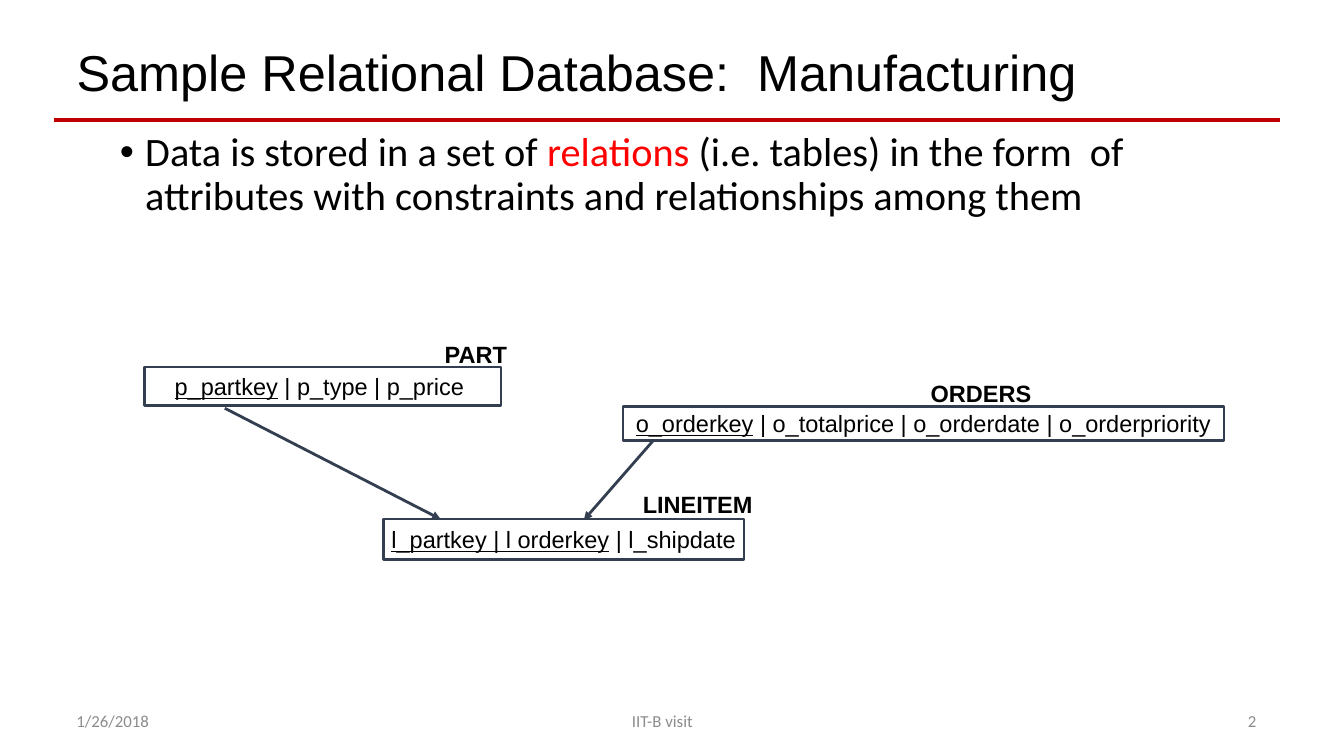
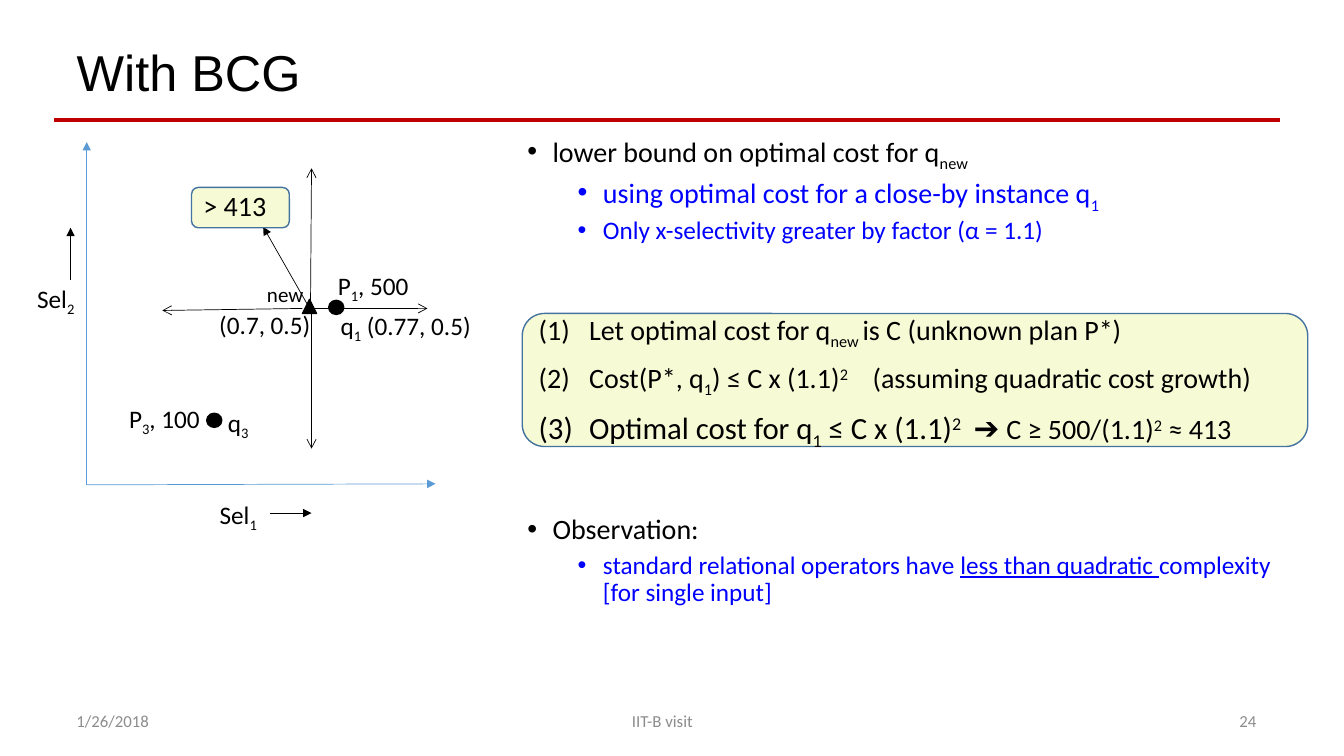
from dataclasses import dataclass

from lxml import etree
from pptx import Presentation
from pptx.dml.color import RGBColor
from pptx.enum.shapes import MSO_CONNECTOR, MSO_SHAPE
from pptx.enum.text import MSO_ANCHOR, MSO_AUTO_SIZE, PP_ALIGN
from pptx.oxml.ns import qn
from pptx.util import Inches, Pt

LEFT, CENTER, RIGHT = PP_ALIGN.LEFT, PP_ALIGN.CENTER, PP_ALIGN.RIGHT
TOP, MIDDLE = MSO_ANCHOR.TOP, MSO_ANCHOR.MIDDLE
FIXED, GROW = MSO_AUTO_SIZE.NONE, MSO_AUTO_SIZE.SHAPE_TO_FIT_TEXT
STRAIGHT = MSO_CONNECTOR.STRAIGHT
RECTANGLE, ROUNDED = MSO_SHAPE.RECTANGLE, MSO_SHAPE.ROUNDED_RECTANGLE
DOT, TRIANGLE = MSO_SHAPE.OVAL, MSO_SHAPE.ISOSCELES_TRIANGLE

# Run formats used inside a line of text
SUB, SUPER = {"baseline": -25}, {"baseline": 30}
UNDERLINE, PLAIN = {"underline": True}, {}


@dataclass(frozen=True)
class Theme:
    heading_font: str = "Arial"
    body_font: str = "Calibri"
    black: str = "000000"
    white: str = "FFFFFF"
    rule: str = "C00000"
    highlight: str = "FF0000"
    detail: str = "0000FF"
    footer: str = "8C8C8C"
    schema: str = "333F50"
    axis: str = "5B9BD5"
    callout_fill: str = "F7FBD5"
    callout_line: str = "43739E"
    title_size: float = 36
    lead_size: float = 28.8
    large_size: float = 22
    body_size: float = 20
    label_size: float = 18
    schema_size: float = 16.8
    small_size: float = 15
    footer_size: float = 12


THEME = Theme()


def add_text(paragraph, runs, *, size=THEME.label_size, font=THEME.body_font,
             color=THEME.black, bold=False, align=LEFT, line_spacing=None,
             space_before=0, indent=None, hanging=0.25, bullet=None, numbered=False):
    """Fill a paragraph from a string or a list of (text, run format) pairs."""
    paragraph.alignment = align
    paragraph.space_before = Pt(space_before)
    if line_spacing:
        paragraph.line_spacing = line_spacing
    properties = paragraph._p.get_or_add_pPr()
    if indent is not None:
        properties.set("marL", str(Inches(indent)))
        properties.set("indent", str(-Inches(hanging)))
    if bullet:
        etree.SubElement(properties, qn("a:buFont")).set("typeface", "Arial")
        etree.SubElement(properties, qn("a:buChar")).set("char", bullet)
    if numbered:
        etree.SubElement(properties, qn("a:buAutoNum")).set("type", "arabicParenBoth")
    for text, style in [(runs, PLAIN)] if isinstance(runs, str) else runs:
        if text == "\n":
            paragraph.add_line_break()
            continue
        run = paragraph.add_run()
        run.text = text
        run.font.name = font
        run.font.size = Pt(style.get("size", size))
        run.font.color.rgb = RGBColor.from_string(style.get("color", color))
        run.font.bold = bold
        run.font.underline = style.get("underline", False)
        run_properties = run._r.get_or_add_rPr()
        if "baseline" in style:
            run_properties.set("baseline", str(style["baseline"] * 1000))
        if "gap" in style:
            run_properties.set("spc", str(style["gap"] * 100))


def bullet_format(level=0, **changes):
    """Format of a list item at the given level."""
    base = {"bullet": "•", "line_spacing": 0.9}
    if level == 0:
        base.update(size=THEME.body_size, indent=0.25, space_before=10)
    else:
        base.update(size=THEME.label_size, indent=0.75, space_before=5, color=THEME.detail)
    return {**base, **changes}


class Deck:
    """Holds the theme, the presentation and the slide being built."""

    def __init__(self, theme):
        self.theme = theme
        self.presentation = Presentation()
        self.presentation.slide_width = Inches(13.33)
        self.presentation.slide_height = Inches(7.5)
        self.slide = None

    def add_slide(self, title, number):
        theme = self.theme
        layout = self.presentation.slide_layouts[1]
        self.slide = self.presentation.slides.add_slide(layout)
        frame = self.placeholder(self.slide.shapes.title, (0.66, 0.4, 11.87, 0.7), MIDDLE)
        add_text(frame.paragraphs[0], title, size=theme.title_size,
                 font=theme.heading_font, line_spacing=0.9)
        self.line((0.54, 1.19), (12.7, 1.19), color=theme.rule, width=3)
        for text, left, width, align in (("1/26/2018", 0.66, 3, LEFT),
                                         ("IIT-B visit", 4.32, 4.5, CENTER),
                                         (number, 9.56, 3, RIGHT)):
            self.label(text, (left, 6.95, width, 0.4), wrap=True, anchor=MIDDLE,
                       auto_size=FIXED, size=theme.footer_size,
                       color=theme.footer, align=align)

    def placeholder(self, shape, box, anchor):
        shape.left, shape.top, shape.width, shape.height = map(Inches, box)
        frame = shape.text_frame
        frame.word_wrap = True
        frame.auto_size = FIXED
        frame.vertical_anchor = anchor
        return frame

    def fill_frame(self, frame, items):
        for index, (runs, style) in enumerate(items):
            paragraph = frame.add_paragraph() if index else frame.paragraphs[0]
            add_text(paragraph, runs, **style)

    def body(self, box, items):
        frame = self.placeholder(self.slide.placeholders[1], box, TOP)
        self.fill_frame(frame, items)

    def label(self, runs, box, *, wrap=False, anchor=TOP, auto_size=GROW,
              inset=True, **style):
        frame = self.slide.shapes.add_textbox(*map(Inches, box)).text_frame
        frame.word_wrap = wrap
        frame.auto_size = auto_size
        frame.vertical_anchor = anchor
        if not inset:
            frame.margin_left = frame.margin_right = 0
            frame.margin_top = frame.margin_bottom = 0
        add_text(frame.paragraphs[0], runs, **style)

    def shape(self, kind, box, *, fill, line, width=1, items=(), wrap=True):
        shape = self.slide.shapes.add_shape(kind, *map(Inches, box))
        shape.shadow.inherit = False
        shape.fill.solid()
        shape.fill.fore_color.rgb = RGBColor.from_string(fill)
        shape.line.color.rgb = RGBColor.from_string(line)
        shape.line.width = Pt(width)
        shape.text_frame.word_wrap = wrap
        shape.text_frame.vertical_anchor = MIDDLE
        self.fill_frame(shape.text_frame, items)

    def callout(self, box, items):
        self.shape(ROUNDED, box, fill=self.theme.callout_fill,
                   line=self.theme.callout_line, items=items)

    def marker(self, kind, left, top, width=0.15):
        black = self.theme.black
        self.shape(kind, (left, top, width, 0.14), fill=black, line=black)

    def relation(self, name, name_box, key, attributes, box):
        """A table of the schema: its name above a framed list of attributes."""
        theme = self.theme
        style = {"size": theme.schema_size, "font": theme.heading_font, "align": CENTER}
        self.shape(RECTANGLE, box, fill=theme.white, line=theme.schema, width=2,
                   wrap=False, items=[([(key, UNDERLINE), (attributes, PLAIN)], style)])
        self.label(name, name_box, bold=True, **style)

    def line(self, start, end, *, color=THEME.black, width=0.5, head=None):
        connector = self.slide.shapes.add_connector(
            STRAIGHT, *map(Inches, (*start, *end)))
        connector.line.color.rgb = RGBColor.from_string(color)
        connector.line.width = Pt(width)
        if head:
            outline = connector.line._get_or_add_ln()
            etree.SubElement(outline, qn("a:tailEnd")).set("type", head)
        etree.SubElement(connector._element.spPr, qn("a:effectLst"))


def build_database_slide(deck):
    theme = deck.theme
    deck.add_slide("Sample Relational Database:  Manufacturing", "2")
    deck.body((1.09, 1.26, 11.15, 5.59), [
        ([("Data is stored in a set of ", PLAIN),
          ("relations", {"color": theme.highlight}),
          (" (i.e. tables) in the form  of attributes with constraints and "
           "relationships among them", PLAIN)],
         bullet_format(size=theme.lead_size)),
    ])

    # Relations of the schema
    deck.relation("PART", (4.3, 3.32, 0.84, 0.38),
                  "p_partkey", " | p_type | p_price ", (1.43, 3.64, 3.54, 0.38))
    deck.relation("ORDERS", (9.03, 3.71, 1.4, 0.38),
                  "o_orderkey", " | o_totalprice | o_orderdate | o_orderpriority",
                  (6.18, 4.03, 5.96, 0.34))
    deck.relation("LINEITEM", (6.27, 4.81, 1.3, 0.38),
                  "l_partkey | l orderkey", " | l_shipdate", (3.8, 5.15, 3.58, 0.4))

    # Keys that point to the line items
    for start, end in (((2.23, 4.05), (4.37, 5.15)), ((6.48, 4.37), (5.79, 5.16))):
        deck.line(start, end, color=theme.schema, width=2, head="triangle")


def build_selectivity_plot(deck):
    theme = deck.theme
    # Axes and their names
    origin = (0.86, 4.81)
    for end in ((4.32, 4.8), (0.86, 1.41)):
        deck.line(origin, end, color=theme.axis, head="triangle")
    for start, end in (((2.68, 5.09), (3.09, 5.09)), ((0.7, 2.78), (0.7, 2.26))):
        deck.line(start, end, head="triangle")
    for index, left, top in (("1", 2.08, 4.9), ("2", 0.27, 2.76)):
        deck.label([("Sel", PLAIN), (index, SUB)], (left, top, 0.59, 0.4))

    # Arrows around the new instance
    for start, end in (((3.09, 3), (3.09, 4.45)), ((3, 3.06), (1.61, 3.08)),
                       ((3.08, 3), (3.09, 1.67)), ((3.09, 3.06), (4.24, 3.06))):
        deck.line(start, end, head="arrow")
    deck.line((3.06, 3.04), (2.61, 2.25), head="triangle")

    # Instances
    deck.marker(DOT, 2.05, 4.1)
    deck.marker(DOT, 3.26, 2.98)
    deck.marker(TRIANGLE, 3, 2.97, width=0.14)

    # Plans, costs and positions
    for index, cost, left, top in (("3", ", 100", 1.28, 4), ("1", ", 500", 3.35, 2.68)):
        deck.label([("P", PLAIN), (index, SUB), (cost, PLAIN)],
                   (left, top, 0.72, 0.3), inset=False)
    deck.label([("q", PLAIN), ("3", SUB)], (2.26, 4.04, 0.22, 0.3), inset=False)
    deck.label([("q", PLAIN), ("1", SUB), (" (0.77, 0.5)", PLAIN)],
               (3.28, 3.03, 1.56, 0.4))
    deck.label(" (0.7, 0.5)", (2.02, 3.02, 1.17, 0.4))
    deck.label("new", (2.55, 2.74, 0.57, 0.35), size=theme.small_size)
    deck.callout((1.9, 1.86, 0.97, 0.4), [
        ("> 413", {"size": theme.body_size, "line_spacing": 0.9, "space_before": 10}),
    ])


def build_bound_slide(deck):
    theme = deck.theme
    deck.add_slide("With BCG", "24")
    deck.body((5.13, 1.29, 8.07, 5.95), [
        ([("lower bound on optimal cost for q", PLAIN), ("new", SUB)], bullet_format()),
        ([("using optimal cost for a close-by instance q", PLAIN), ("1", SUB)],
         bullet_format(1, size=theme.body_size)),
        ("Only x-selectivity greater by factor (α = 1.1)", bullet_format(1)),
        ("Observation:", bullet_format(space_before=193)),
        ([("standard relational operators have ", PLAIN),
          ("less than quadratic ", UNDERLINE), ("complexity", PLAIN),
          ("\n", PLAIN), ("[for single input]", PLAIN)], bullet_format(1)),
    ])
    build_selectivity_plot(deck)

    # Steps that lead to the bound
    step = {"size": theme.body_size, "line_spacing": 0.9, "space_before": 10,
            "indent": 0.5, "hanging": 0.5, "numbered": True}
    normal = {"size": theme.body_size}
    deck.callout((5.18, 3.11, 7.79, 1.32), [
        ([("Let optimal cost for q", PLAIN), ("new ", SUB),
          ("is C (unknown plan P*)", PLAIN)], step),
        ([("Cost(P*, q", PLAIN), ("1", SUB), (") ≤ C x (1.1)", PLAIN), ("2", SUPER),
          (" ", {"gap": 13}), ("(assuming quadratic cost growth)", PLAIN)], step),
        ([("Optimal cost for q", PLAIN), ("1", SUB), (" ≤ C x (1.1)", PLAIN),
          ("2", SUPER), (" ", {"gap": 4}), ("➔ ", PLAIN), ("C ≥ 500/(1.1)", normal),
          ("2", {**normal, **SUPER}), (" ≈ 413", normal)],
         {**step, "size": theme.large_size}),
    ])


def main():
    deck = Deck(THEME)
    build_database_slide(deck)
    build_bound_slide(deck)
    deck.presentation.save("out.pptx")


if __name__ == "__main__":
    main()
